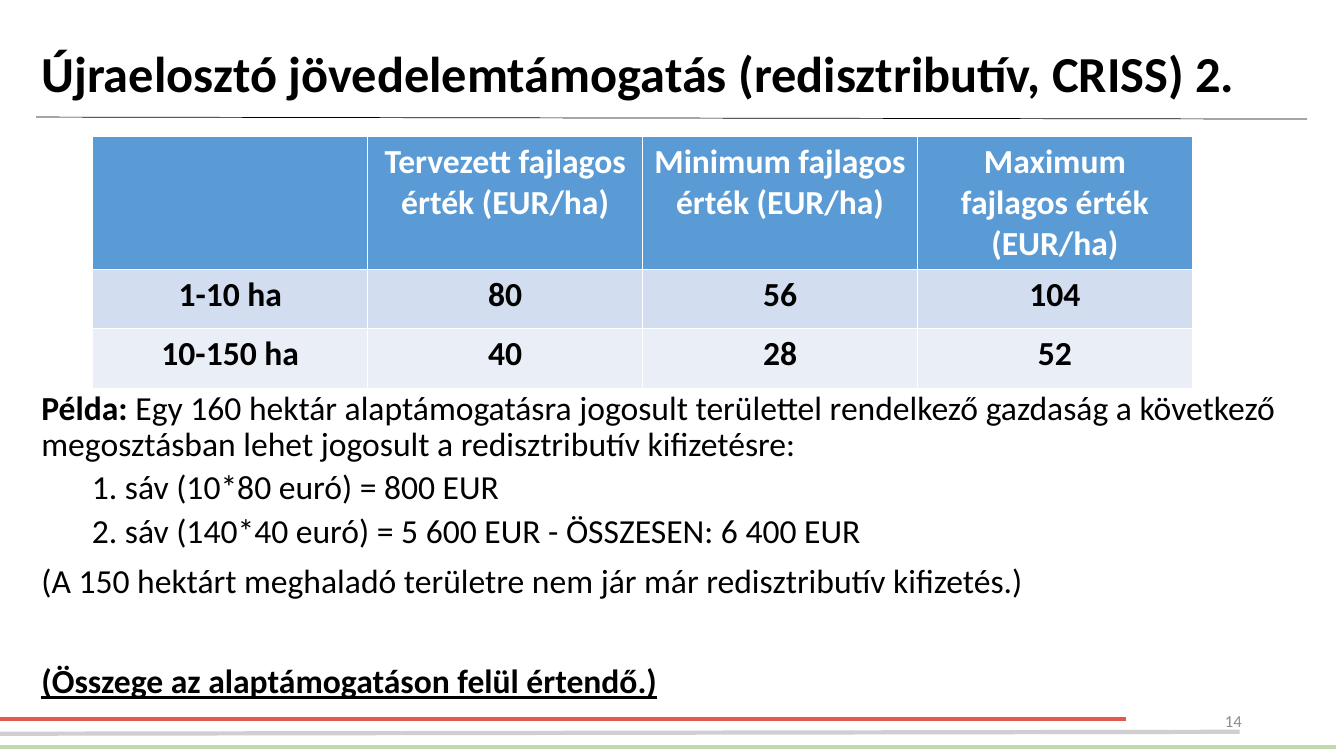
import pptx
import pptx.util
import pptx.dml.color
import pptx.enum.shapes
import pptx.enum.text
import lxml.etree

Cm = pptx.util.Cm
Pt = pptx.util.Pt
ALIGN = pptx.enum.text.PP_ALIGN
ANCHOR = pptx.enum.text.MSO_ANCHOR


def color(value):
    return pptx.dml.color.RGBColor.from_string(value)


class SlideBuilder:
    font_name = "Calibri"
    black = "000000"
    body_size = 24

    def __init__(self, presentation):
        self.slide = presentation.slides.add_slide(presentation.slide_layouts[1])

    def place(self, shape, left, top, width, height):
        shape.left, shape.top = Cm(left), Cm(top)
        shape.width, shape.height = Cm(width), Cm(height)

    def style(self, paragraph, size, value, bold=None, align=ALIGN.LEFT):
        paragraph.alignment = align
        paragraph.font.name = self.font_name
        paragraph.font.size = Pt(size)
        paragraph.font.color.rgb = color(value)
        paragraph.font.bold = bold

    def line(self, start, end, value, width):
        connector = self.slide.shapes.add_connector(
            pptx.enum.shapes.MSO_CONNECTOR.STRAIGHT, *map(Cm, start + end))
        connector.line.color.rgb = color(value)
        connector.line.width = Pt(width)
        properties = connector._element.spPr
        lxml.etree.SubElement(properties, pptx.oxml.ns.qn("a:effectLst"))

    def title(self, text, box):
        shape = self.slide.shapes.title
        self.place(shape, *box)
        frame = shape.text_frame
        frame.text = text
        frame.auto_size = pptx.enum.text.MSO_AUTO_SIZE.NONE
        frame.vertical_anchor = ANCHOR.MIDDLE
        paragraph = frame.paragraphs[0]
        paragraph.line_spacing = 0.9
        self.style(paragraph, 36, self.black, True)

    def body(self, items, box):
        shape = self.slide.placeholders[1]
        self.place(shape, *box)
        frame = shape.text_frame
        frame.auto_size = pptx.enum.text.MSO_AUTO_SIZE.NONE
        for index, (level, space, runs) in enumerate(items):
            paragraph = frame.add_paragraph() if index else frame.paragraphs[0]
            paragraph.level = level
            properties = paragraph._p.get_or_add_pPr()
            properties.set("marL", str(Cm(1.27 * level)))
            properties.set("indent", "0")
            paragraph.line_spacing = 0.9
            paragraph.space_before = Pt(space)
            lxml.etree.SubElement(properties, pptx.oxml.ns.qn("a:buNone"))
            self.style(paragraph, self.body_size, self.black)
            for text, bold, underline in runs:
                run = paragraph.add_run()
                run.text = text
                run.font.bold = bold
                run.font.underline = underline

    def table(self, rows, fills, heights, box):
        frame = self.slide.shapes.add_table(len(rows), len(rows[0]), *map(Cm, box))
        table = frame.table
        for row_index, values in enumerate(rows):
            table.rows[row_index].height = Cm(heights[row_index])
            for column_index, value in enumerate(values):
                cell = table.cell(row_index, column_index)
                cell.fill.solid()
                cell.fill.fore_color.rgb = color(fills[row_index])
                cell.text = value
                text_color = self.black if row_index else "FFFFFF"
                self.style(cell.text_frame.paragraphs[0], self.body_size,
                           text_color, True, ALIGN.CENTER)

    def page_number(self, text, box):
        shape = self.slide.shapes.add_textbox(*map(Cm, box))
        frame = shape.text_frame
        frame.word_wrap = True
        frame.vertical_anchor = ANCHOR.MIDDLE
        frame.text = text
        self.style(frame.paragraphs[0], 12, "8C8C8C", align=ALIGN.RIGHT)


def main():
    presentation = pptx.Presentation()
    presentation.slide_width = Cm(33.87)
    presentation.slide_height = Cm(19.05)
    builder = SlideBuilder(presentation)

    builder.line((0, 18.11), (28.37, 18.11), "E15A4B", 3)
    builder.line((0, 18.82), (33.68, 18.82), "BEDCAA", 3)
    builder.line((0, 18.49), (31.24, 18.44), "D0CECE", 3)
    builder.line((0.91, 2.95), (32.94, 3), "000000", 0.5)

    builder.title("Újraelosztó jövedelemtámogatás (redisztributív, CRISS) 2.",
                  (0.79, 0.41, 31.83, 3))
    builder.table(
        [["", "Tervezett fajlagos érték (EUR/ha)",
          "Minimum fajlagos érték (EUR/ha)", "Maximum fajlagos érték (EUR/ha)"],
         ["1-10 ha", "80", "56", "104"],
         ["10-150 ha", "40", "28", "52"]],
        ["5B9BD5", "D2DEEF", "EAEFF7"], [3.3, 1.5, 1.5], (2.34, 3.43, 27.71, 6.3))
    builder.body([
        (0, 0, [("Példa:", True, None),
                (" Egy 160 hektár alaptámogatásra jogosult területtel rendelkező gazdaság "
                 "a következő megosztásban lehet jogosult a redisztributív kifizetésre:",
                 False, None)]),
        (1, 5, [("1. sáv (10*80 euró) = 800 EUR", False, None)]),
        (1, 5, [("2. sáv (140*40 euró) = 5 600 EUR - ÖSSZESEN: 6 400 EUR", False, None)]),
        (0, 10, [("(A 150 hektárt meghaladó területre nem jár már redisztributív kifizetés.)",
                  False, None)]),
        (0, 46, [("(Összege az alaptámogatáson felül értendő.)", True, True)]),
    ], (0.79, 9.73, 32.66, 8.25))
    builder.page_number("14", (23.93, 17.65, 7.62, 1.02))

    presentation.save("out.pptx")


if __name__ == "__main__":
    main()
